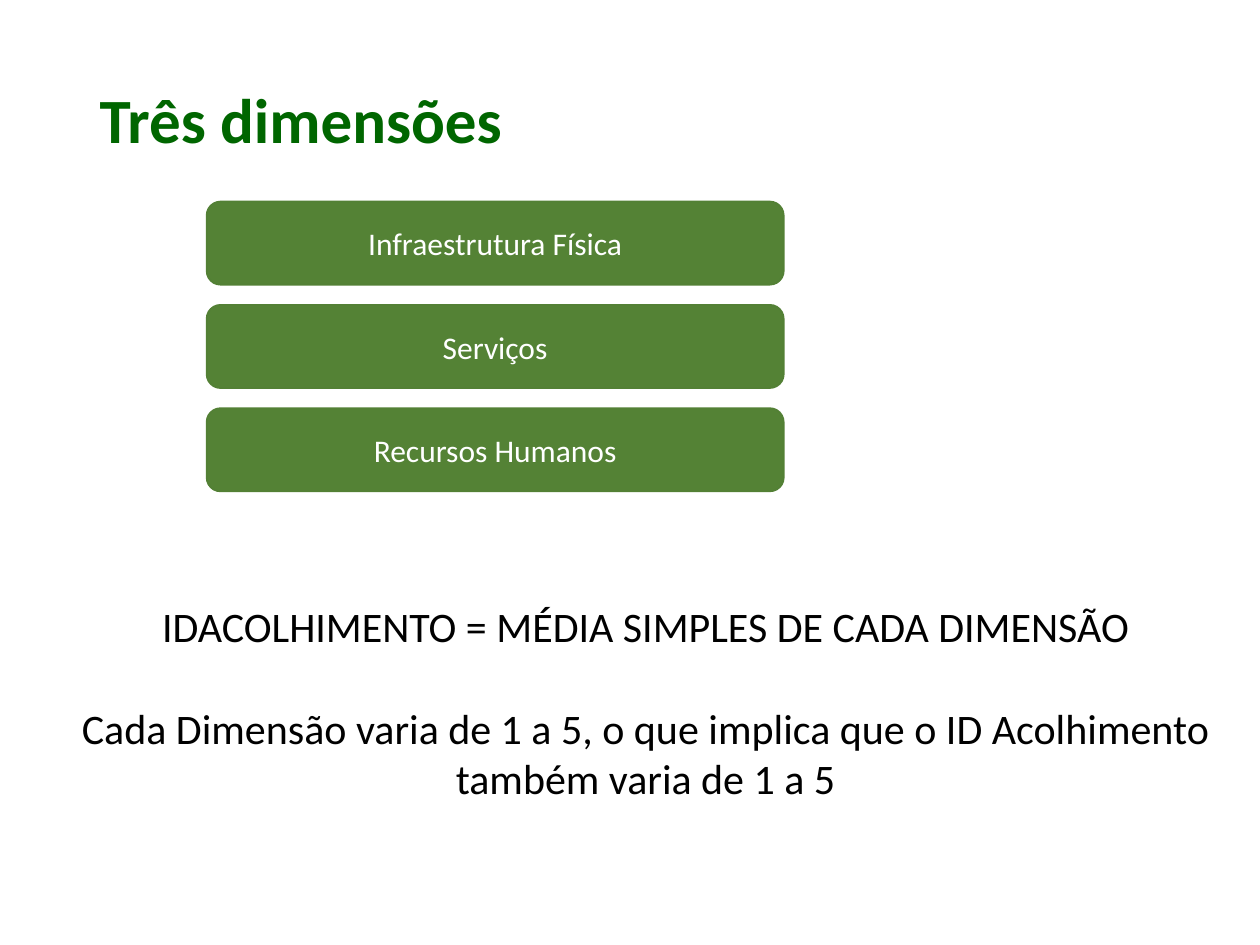
from dataclasses import dataclass

from pptx import Presentation
from pptx.dml.color import RGBColor
from pptx.enum.shapes import MSO_SHAPE
from pptx.enum.text import MSO_ANCHOR, MSO_AUTO_SIZE, PP_ALIGN
from pptx.util import Inches, Pt

FONT = "Calibri"
TITLE_GREEN = RGBColor(0x00, 0x66, 0x00)
BOX_GREEN = RGBColor(0x54, 0x82, 0x35)
EDGE_GREEN = RGBColor(0x53, 0x80, 0x35)
BLACK = RGBColor(0x00, 0x00, 0x00)
WHITE = RGBColor(0xFF, 0xFF, 0xFF)

BOX_LEFT, BOX_TOP, BOX_WIDTH, BOX_HEIGHT = 1.64, 1.6, 4.58, 0.66
BOX_PITCH = 0.82


@dataclass
class Dimension:
    name: str
    top: float


DIMENSIONS = [
    Dimension(name, BOX_TOP + i * BOX_PITCH)
    for i, name in enumerate(["Infraestrutura Física", "Serviços", "Recursos Humanos"])
]
NOTES = [
    "IDACOLHIMENTO = MÉDIA SIMPLES DE CADA DIMENSÃO",
    "Cada Dimensão varia de 1 a 5, o que implica que o ID Acolhimento também varia de 1 a 5",
]


def add_run(p, text: str, size: int, color: RGBColor, bold: bool = False) -> None:
    r = p.add_run()
    r.text = text
    r.font.name = FONT
    r.font.size = Pt(size)
    r.font.bold = bold
    r.font.color.rgb = color


def add_dimension(shapes, dim: Dimension) -> None:
    sp = shapes.add_shape(MSO_SHAPE.ROUNDED_RECTANGLE, Inches(BOX_LEFT), Inches(dim.top),
                          Inches(BOX_WIDTH), Inches(BOX_HEIGHT))
    sp.shadow.inherit = False
    sp.fill.solid()
    sp.fill.fore_color.rgb = BOX_GREEN
    sp.line.color.rgb = EDGE_GREEN
    sp.line.width = Pt(1)
    tf = sp.text_frame
    tf.vertical_anchor = MSO_ANCHOR.MIDDLE
    p = tf.paragraphs[0]
    p.alignment = PP_ALIGN.CENTER
    add_run(p, dim.name, 18, WHITE)


def main() -> None:
    prs = Presentation()
    prs.slide_width, prs.slide_height = Inches(10), Inches(7.5)
    slide = prs.slides.add_slide(prs.slide_layouts[5])

    # Title
    title = slide.shapes.title
    title.left, title.top = Inches(0.69), Inches(0.59)
    title.width, title.height = Inches(8.62), Inches(0.77)
    tf = title.text_frame
    tf.auto_size = MSO_AUTO_SIZE.NONE
    tf.vertical_anchor = MSO_ANCHOR.MIDDLE
    p = tf.paragraphs[0]
    p.alignment = PP_ALIGN.LEFT
    p.line_spacing = 0.9
    add_run(p, "Três dimensões", 36, TITLE_GREEN, bold=True)

    # Explanation of the index
    box = slide.shapes.add_textbox(Inches(0.46), Inches(4.72), Inches(9.33), Inches(1.71))
    tf = box.text_frame
    tf.word_wrap = True
    for i, note in enumerate(NOTES):
        p = tf.add_paragraph() if i else tf.paragraphs[0]
        p.alignment = PP_ALIGN.CENTER
        if i:
            p.space_before = Pt(29)
        add_run(p, note, 24, BLACK)

    # Stack of dimensions
    group = slide.shapes.add_group_shape()
    for dim in DIMENSIONS:
        add_dimension(group.shapes, dim)

    prs.save("out.pptx")


if __name__ == "__main__":
    main()
